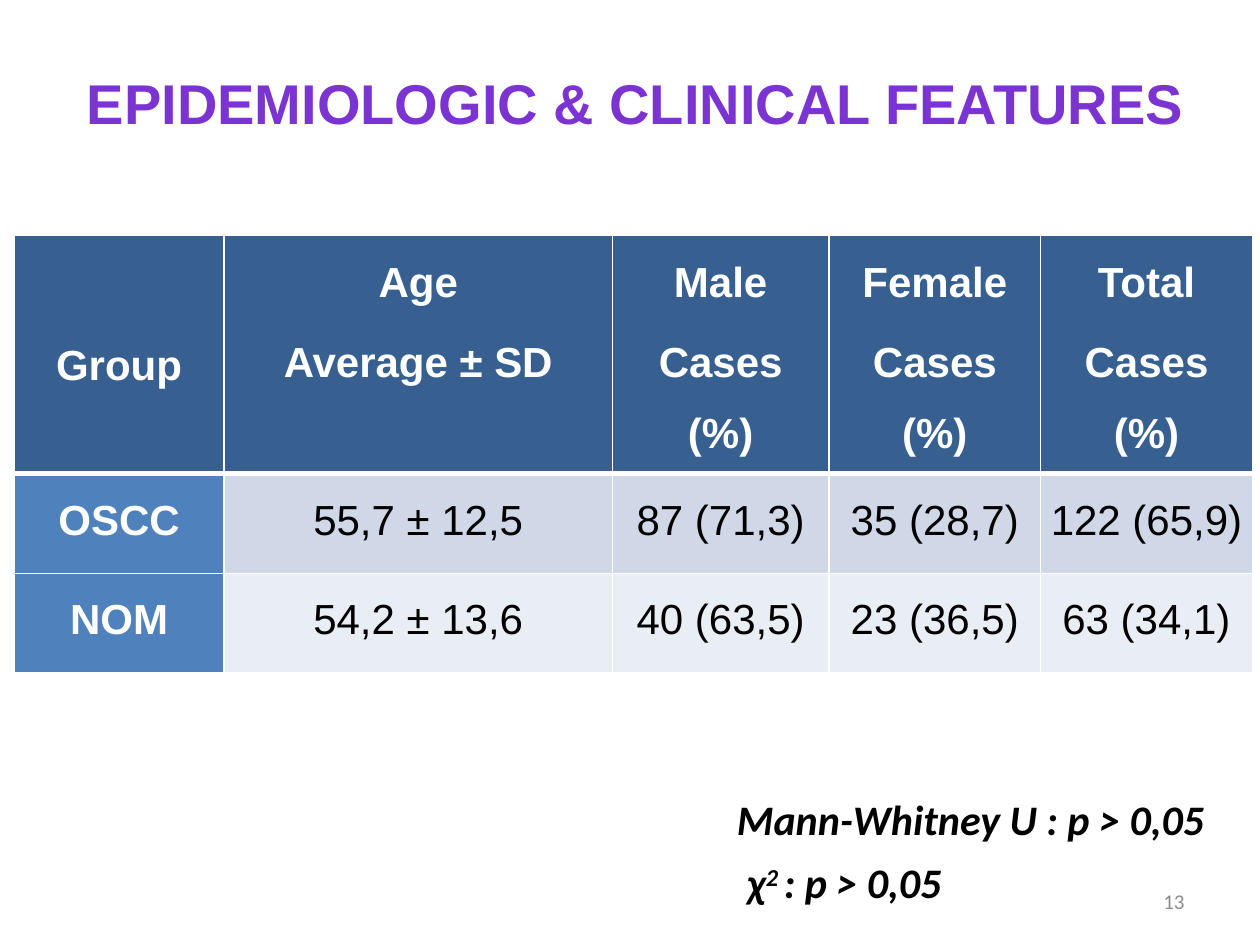
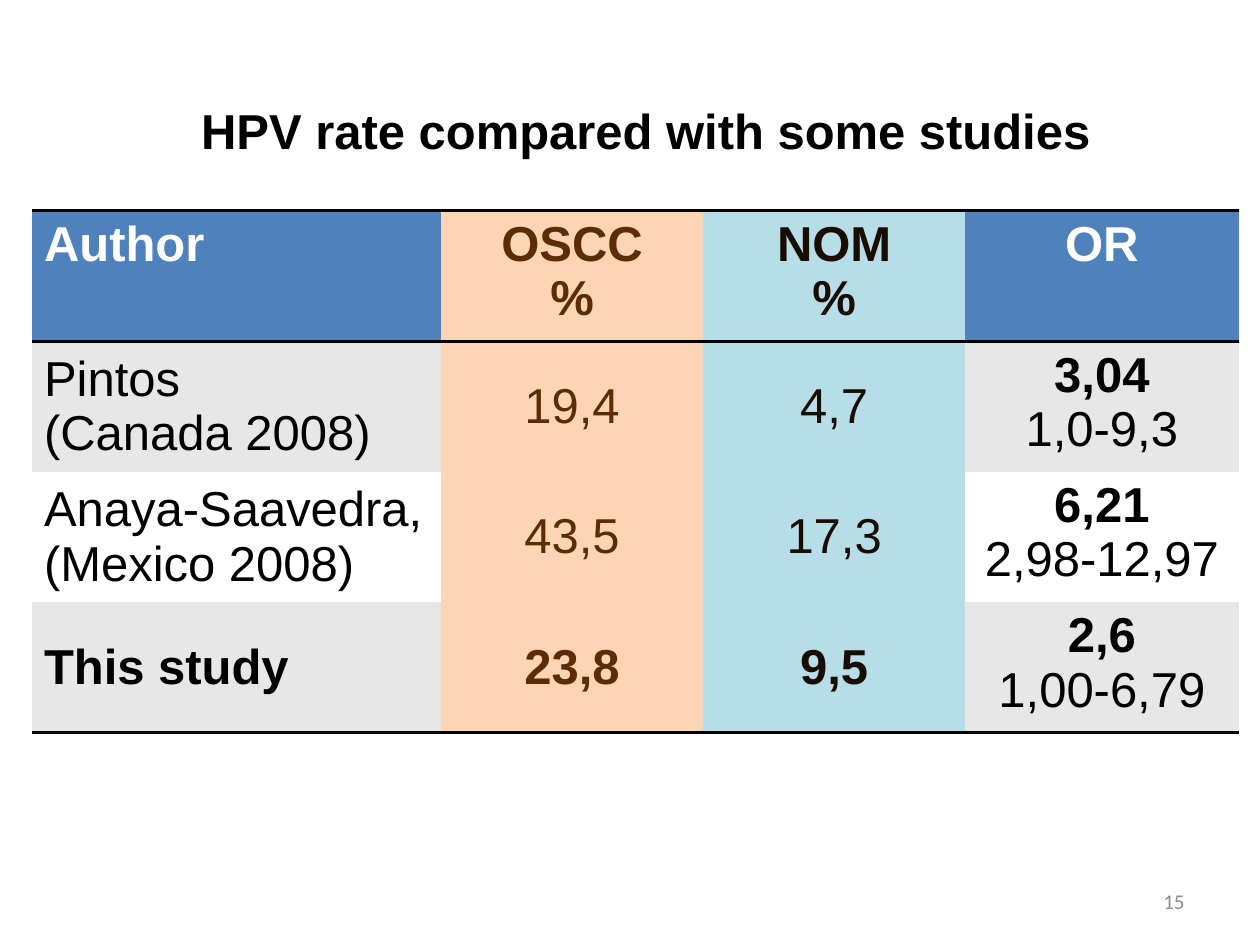
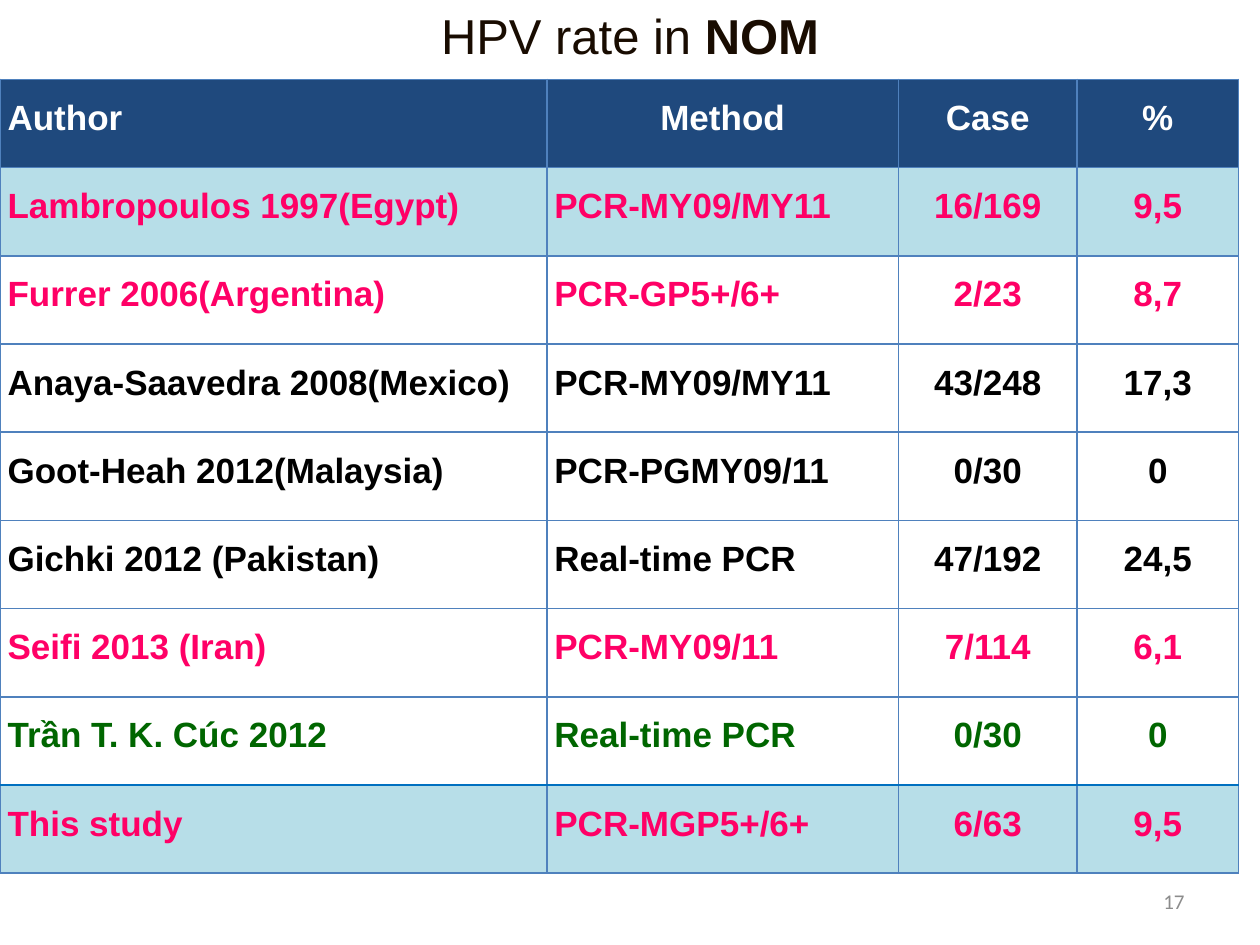
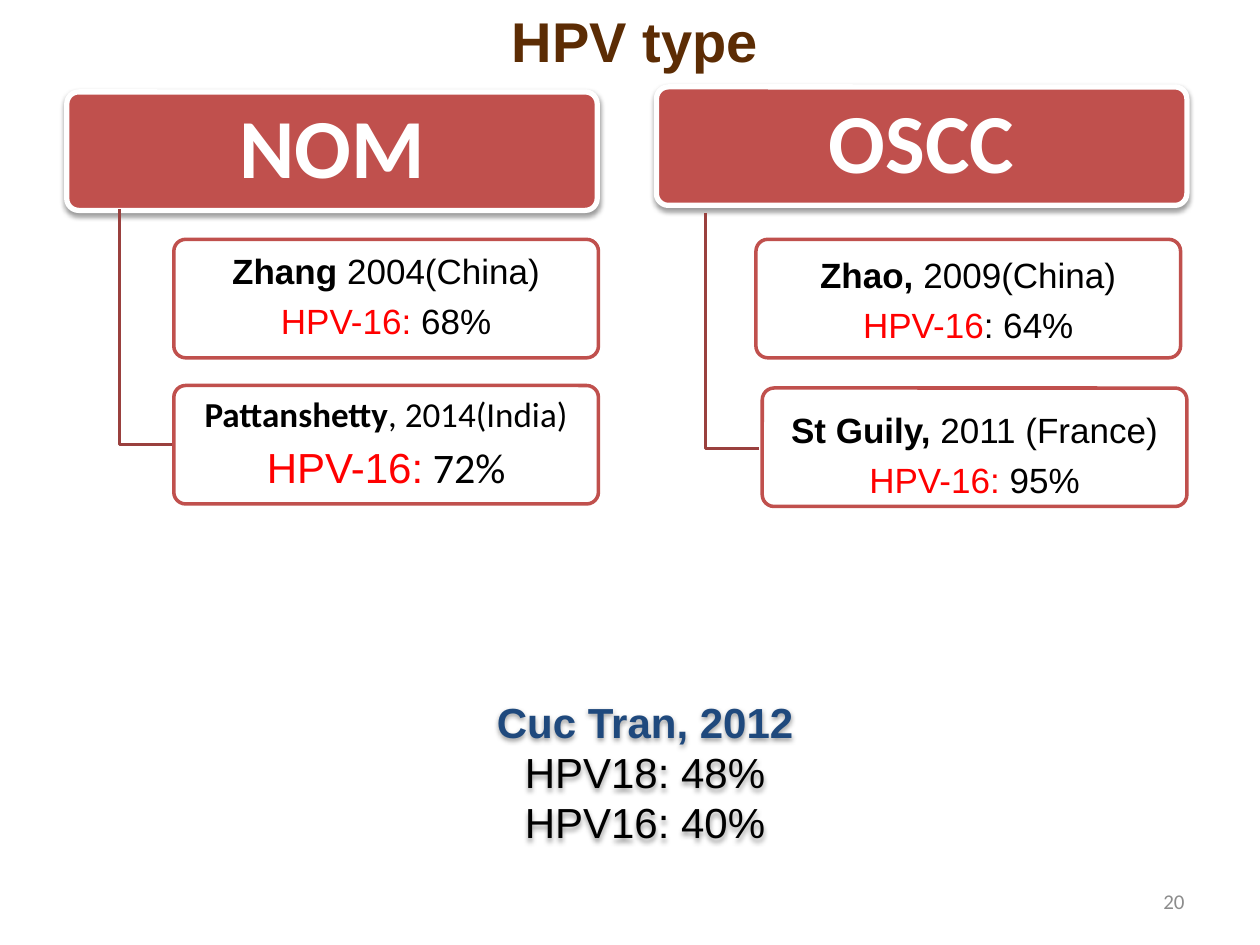
from lxml import etree
from pptx import Presentation
from pptx import util as u
from pptx.dml.color import RGBColor
from pptx.enum import shapes, text
from pptx.oxml import ns

PX = 9144  # EMU per px, 100 px to the inch
ALIGN = {"l": text.PP_ALIGN.LEFT, "c": text.PP_ALIGN.CENTER, "r": text.PP_ALIGN.RIGHT}
TOP, MIDDLE = text.MSO_ANCHOR.TOP, text.MSO_ANCHOR.MIDDLE
PLAIN_TABLE = "{2D5ABB26-0587-4C30-8999-92F81FD0307C}"

BLACK, WHITE, GREY = "000000", "FFFFFF", "8C8C8C"
NAVY, BLUE, SKY = "1F497D", "4F81BD", "B7DEE8"
BROWN, DARK, PEACH = "5C2C04", "190C01", "FCD5B5"
RED, BRICK, PINK, GREEN = "FF0000", "C0504D", "FF0066", "006600"


def rgb(code):
    return RGBColor.from_string(code)


def px(*lengths):
    return [u.Emu(n * PX) for n in lengths]


def add_xml(parent, tag, **attrs):
    return etree.SubElement(parent, ns.qn(tag), attrs)


def style_run(r, size, font, color, bold=False, italic=False, raised=False):
    r.font.size, r.font.name = u.Pt(size), font
    r.font.bold, r.font.italic = bold, italic
    r.font.color.rgb = rgb(color)
    if raised:
        r._r.get_or_add_rPr().set("baseline", "30000")


def write(tf, paras, size=24, font="Arial", color=BLACK, align="c", spacing=None,
          before=0, after=0, **fmt):
    """Fill a text frame; a paragraph is a string or a list of (text, changes) runs."""
    base = dict(size=size, font=font, color=color, **fmt)
    for i, para in enumerate(paras):
        p = tf.add_paragraph() if i else tf.paragraphs[0]
        p.alignment = ALIGN[align]
        if spacing:
            p.line_spacing = spacing
        p.space_before = u.Pt(before if i else 0)
        p.space_after = u.Pt(after)
        for words, changes in [(para, {})] if isinstance(para, str) else para:
            r = p.add_run()
            r.text = words
            style_run(r, **{**base, **changes})


def set_border(cell, side, line):
    tc_pr = cell._tc.get_or_add_tcPr()
    if line is None:
        add_xml(add_xml(tc_pr, f"a:ln{side}", w="0"), "a:noFill")
        return
    color, width = line
    ln = add_xml(tc_pr, f"a:ln{side}", w=str(u.Pt(width)))
    add_xml(add_xml(ln, "a:solidFill"), "a:srgbClr", val=color)


def cast_shadow(sp):
    effects = sp.element.spPr.find(ns.qn("a:effectLst"))
    shadow = add_xml(effects, "a:outerShdw", blurRad=str(u.Pt(3.1)), dist=str(u.Pt(1.6)),
                     dir="5400000", rotWithShape="0")
    add_xml(add_xml(shadow, "a:srgbClr", val=BLACK), "a:alpha", val="38000")


class Deck:
    def __init__(self):
        self.prs = Presentation()
        self.prs.slide_width, self.prs.slide_height = px(1000, 750)
        self.s = None

    def slide(self, number, title, at, fill=None, **fmt):
        self.s = self.prs.slides.add_slide(self.prs.slide_layouts[5])
        sp = self.s.shapes.title
        sp.left, sp.top, sp.width, sp.height = px(*at)
        if fill:
            sp.fill.solid()
            sp.fill.fore_color.rgb = rgb(fill)
        tf = sp.text_frame
        tf.auto_size, tf.vertical_anchor = text.MSO_AUTO_SIZE.NONE, TOP
        write(tf, [title], **fmt)
        self.label(str(number), (717, 695, 233, 40), wrap=True, anchor=MIDDLE,
                   size=12, font="Calibri", color=GREY, align="r")

    def label(self, para, at, wrap=False, anchor=TOP, **fmt):
        tf = self.s.shapes.add_textbox(*px(*at)).text_frame
        tf.word_wrap, tf.vertical_anchor = wrap, anchor
        write(tf, [para], **fmt)

    def box(self, paras, at, fill=None, line=None, corner=None, shadow=False,
            insets=(10, 7, 10, 7), **fmt):
        sp = self.s.shapes.add_shape(shapes.MSO_SHAPE.ROUNDED_RECTANGLE, *px(*at))
        sp.shadow.inherit = False
        if corner:
            sp.adjustments[0] = corner
        if fill:
            sp.fill.solid()
            sp.fill.fore_color.rgb = rgb(fill)
        else:
            sp.fill.background()
        if line:
            sp.line.color.rgb, sp.line.width = rgb(line[0]), u.Pt(line[1])
        else:
            sp.line.fill.background()
        if shadow:
            cast_shadow(sp)
        tf = sp.text_frame
        tf.word_wrap, tf.vertical_anchor = True, MIDDLE
        tf.margin_left, tf.margin_top, tf.margin_right, tf.margin_bottom = px(*insets)
        write(tf, paras, **fmt)

    def branch(self, left, top, right, bottom):
        """Draw an open line down and then right."""
        fb = self.s.shapes.build_freeform(left, top, scale=PX)
        fb.add_line_segments([(left, bottom), (right, bottom)], close=False)
        sp = fb.convert_to_shape()
        sp.shadow.inherit = False
        sp.fill.background()
        sp.line.color.rgb, sp.line.width = rgb("9A403E"), u.Pt(2)

    def table(self, corner, cols, rows, cells, look, rules, upright=None, insets=(10, 5)):
        """look(row, col) gives (fill, anchor, text format); rules are the lines between rows."""
        frame = self.s.shapes.add_table(len(rows), len(cols),
                                        *px(*corner, sum(cols), sum(rows)))
        next(frame.element.iter(ns.qn("a:tableStyleId"))).text = PLAIN_TABLE
        table = frame.table
        table.first_row = table.horz_banding = False
        for col, width in zip(table.columns, px(*cols)):
            col.width = width
        for row, height in zip(table.rows, px(*rows)):
            row.height = height
        side, end = px(*insets)
        for i, row in enumerate(cells):
            for j, words in enumerate(row):
                cell = table.cell(i, j)
                for edge, line in zip("LRTB", (upright, upright, rules[i], rules[i + 1])):
                    set_border(cell, edge, line)
                fill, anchor, fmt = look(i, j)
                cell.fill.solid()
                cell.fill.fore_color.rgb = rgb(fill)
                cell.vertical_anchor = anchor
                cell.margin_left = cell.margin_right = side
                cell.margin_top = cell.margin_bottom = end
                write(cell.text_frame, words.split("\n"), **fmt) if isinstance(words, str) \
                    else write(cell.text_frame, words, **fmt)


def features_slide(deck):
    deck.slide(13, "EPIDEMIOLOGIC & CLINICAL FEATURES", (17, 49, 975, 92),
               size=32, color="7B34D2", bold=True)
    cells = [
        ["Group", "Age\nAverage ± SD", "Male\nCases (%)", "Female\nCases (%)", "Total\nCases (%)"],
        ["OSCC", "55,7 ± 12,5", "87 (71,3)", "35 (28,7)", "122 (65,9)"],
        ["NOM", "54,2 ± 13,6", "40 (63,5)", "23 (36,5)", "63 (34,1)"],
    ]

    def look(i, j):
        strong = i == 0 or j == 0
        fill = "376091" if i == 0 else BLUE if j == 0 else ("D0D8E8", "E9EDF4")[i - 1]
        gap = 4 if i else 3
        return fill, MIDDLE if i == j == 0 else TOP, dict(
            color=WHITE if strong else BLACK, bold=strong, spacing=1.5, before=gap, after=gap)

    thin = (WHITE, 1)
    deck.table((11, 187), [167, 308, 172, 168, 168], [189, 79, 79], cells, look,
               [thin, (WHITE, 3), thin, thin], thin, insets=(7, 0))
    test = dict(font="Calibri", bold=True, italic=True, align="l")
    deck.label([("χ", {}), ("2 ", {"raised": True}), (": p > 0,05", {})],
               (583, 675, 181, 50), **test)
    deck.label("Mann-Whitney U : p > 0,05", (575, 625, 394, 50), **test)


def studies_slide(deck):
    deck.slide(15, "HPV rate compared with some studies", (25, 75, 975, 57),
               size=28, bold=True)

    def odds(ratio, interval):
        return [[(ratio, {"bold": True})], interval]

    cells = [
        ["Author", "OSCC\n%", "NOM\n%", "OR"],
        ["Pintos\n(Canada 2008)", "19,4", "4,7", odds("3,04", "1,0-9,3")],
        ["Anaya-Saavedra, (Mexico 2008)", "43,5", "17,3", odds("6,21", "2,98-12,97")],
        ["This study", "23,8", "9,5", odds("2,6", "1,00-6,79")],
    ]
    columns = {1: (PEACH, BROWN), 2: (SKY, DARK)}

    def look(i, j):
        plain = (BLUE, WHITE) if i == 0 else ("E7E7E7" if i % 2 else WHITE, BLACK)
        fill, color = columns.get(j, plain)
        return fill, TOP if i == 0 or j == 3 else MIDDLE, dict(
            size=28, color=color, align="c" if j else "l",
            bold=i == 0 or (i == 3 and j < 3))

    rule = (BLACK, 2)
    deck.table((25, 167), [325, 208, 208, 217], [104, 103, 103, 103], cells, look,
               [rule, rule, None, None, rule])


def nom_slide(deck):
    deck.slide(17, [("HPV rate in", {}), (" NOM", {"bold": True})], (0, -1, 1000, 57),
               fill=WHITE, size=28, color=DARK)
    cells = [
        ["Author", "Method", "Case", "%"],
        ["Lambropoulos 1997(Egypt)", "PCR-MY09/MY11", "16/169", "9,5"],
        ["Furrer 2006(Argentina)", "PCR-GP5+/6+", "2/23", "8,7"],
        ["Anaya-Saavedra 2008(Mexico)", "PCR-MY09/MY11", "43/248", "17,3"],
        ["Goot-Heah 2012(Malaysia)", "PCR-PGMY09/11", "0/30", "0"],
        ["Gichki 2012 (Pakistan)", "Real-time PCR", "47/192", "24,5"],
        ["Seifi 2013 (Iran)", "PCR-MY09/11", "7/114", "6,1"],
        ["Trần T. K. Cúc 2012", "Real-time PCR", "0/30", "0"],
        ["This study", "PCR-MGP5+/6+", "6/63", "9,5"],
    ]
    inks = [WHITE, PINK, PINK, BLACK, BLACK, BLACK, PINK, GREEN, PINK]
    fills = {0: NAVY, 1: SKY, 8: SKY}

    def look(i, j):
        left = j == 0 or (j == 1 and i > 0)
        return fills.get(i, WHITE), TOP, dict(
            size=20, color=inks[i], bold=True, spacing=1.5,
            align="l" if left else "c", after=0 if i else 3)

    thin = (BLUE, 1)
    deck.table((0, 63), [434, 279, 142, 128], [70] * 9, cells, look,
               [thin] * 8 + [("0070C0", 1.5), thin], thin, insets=(6, 0))


def types_slide(deck):
    deck.slide(20, "HPV type", (75, 0, 858, 64), size=32, color=BROWN, bold=True)
    deck.box([[("Cuc Tran, 2012", {"color": NAVY, "bold": True})], "HPV18: 48%", "HPV16: 40%"],
             (308, 525, 408, 175), shadow=True)

    for name, left, top in [("NOM", 53, 73), ("OSCC", 521, 69)]:
        deck.box([name], (left, top, 421, 94), fill=BRICK, line=(WHITE, 3), corner=0.1,
                 shadow=True, size=48, font="Calibri", color=WHITE, bold=True, spacing=0.9)
    for left, top in [(95, 166), (560, 169)]:
        deck.branch(left, top, left + 42, top + 187)

    bold, red = {"bold": True}, {"color": RED}
    calibri = {"font": "Calibri"}
    studies = [
        (138, 190, 0, [("Zhang ", bold), ("2004(China)", {})],
         [("HPV-16:", red), (" 68%", {})]),
        (138, 306, 0, [("Pattanshetty", {**bold, **calibri}), (", 2014(India)", calibri)],
         [("HPV-16:", {**red, "size": 24}), (" 72%", {**calibri, "size": 24})]),
        (600, 190, 5, [("Zhao, ", bold), ("2009(China)", {})],
         [("HPV-16", red), (": 64%", {})]),
        (605, 308, 16, [("St Guily,", bold), (" 2011 (France)", {})],
         [("HPV-16:", red), (" 95%", {})]),
    ]
    for left, top, drop, study, share in studies:
        deck.box([study, share], (left, top, 337, 94), fill=WHITE, line=(BRICK, 2), corner=0.1,
                 insets=(4, 3 + drop, 4, 3), size=20, spacing=0.9, after=7)


def main():
    deck = Deck()
    for build in (features_slide, studies_slide, nom_slide, types_slide):
        build(deck)
    deck.prs.save("out.pptx")


if __name__ == "__main__":
    main()
